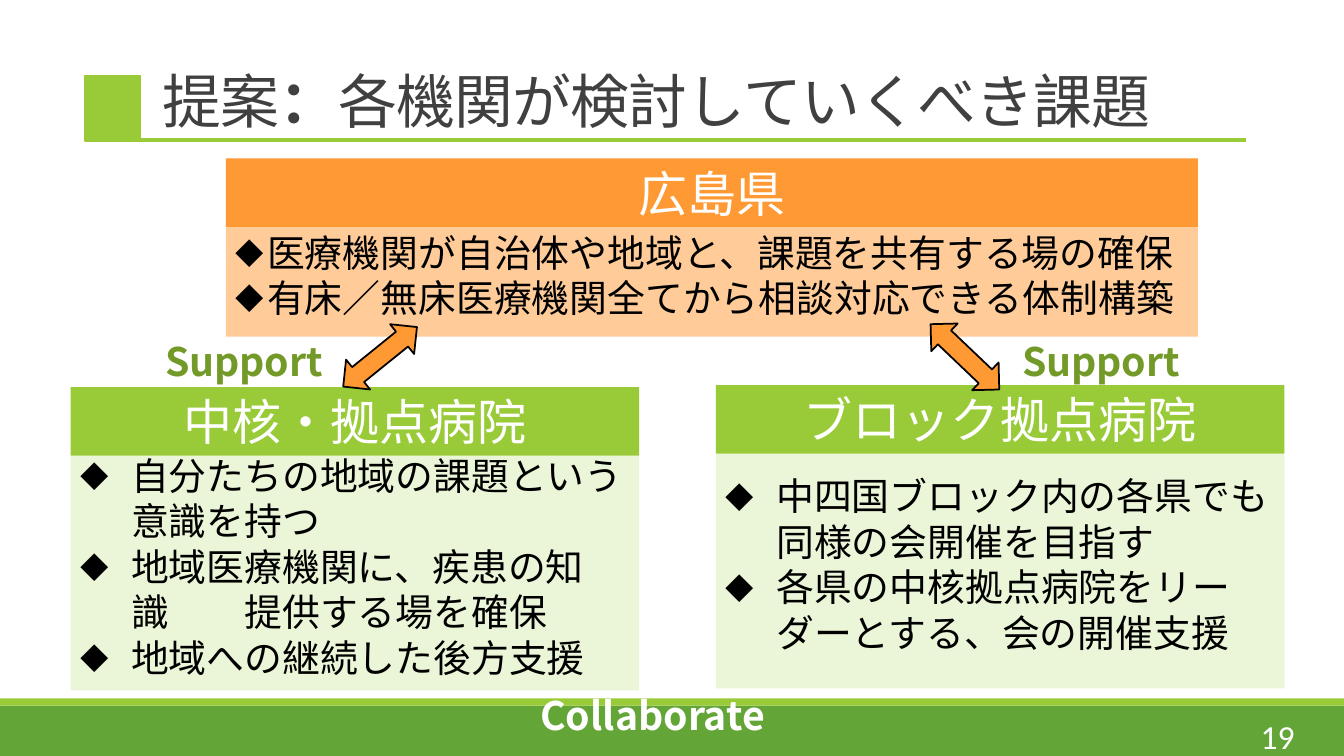
from dataclasses import dataclass

import pptx
import pptx.dml.color
import pptx.enum.shapes
import pptx.enum.text
import pptx.oxml.ns
import pptx.util
from lxml import etree
from pptx.util import Inches


@dataclass(frozen=True)
class Theme:
    latin: str = "Calibri"
    japanese: str = "Noto Sans CJK JP"
    green: str = "99CB38"
    dark_green: str = "63A537"
    pale_green: str = "EBF5D7"
    label_green: str = "739A28"
    orange: str = "FF9933"
    pale_orange: str = "FFCC99"
    title_gray: str = "404040"
    black: str = "000000"
    white: str = "FFFFFF"
    title_size: int = 42
    heading_size: int = 35
    label_size: int = 28
    list_size: int = 27
    number_size: int = 24


theme = Theme()
qn = pptx.oxml.ns.qn
rgb = pptx.dml.color.RGBColor.from_string
ALIGN = pptx.enum.text.PP_ALIGN
ANCHOR = pptx.enum.text.MSO_ANCHOR
SHAPE = pptx.enum.shapes.MSO_SHAPE


def style_paragraph(paragraph, size, color, name, align=ALIGN.LEFT, bold=False):
    paragraph.alignment = align
    font = paragraph.font
    font.size, font.bold, font.name = pptx.util.Pt(size), bold, name
    font.color.rgb = rgb(color)
    etree.SubElement(font._rPr, qn("a:ea"), typeface=name)


def add_filled_shape(kind, box, fill, line=None):
    shape = slide.shapes.add_shape(kind, *map(Inches, box))
    shape.shadow.inherit = False
    shape.fill.solid()
    shape.fill.fore_color.rgb = rgb(fill)
    if line:
        shape.line.color.rgb = rgb(line)
        shape.line.width = pptx.util.Pt(1.25)
    else:
        shape.line.fill.background()
    return shape


presentation = pptx.Presentation()
presentation.slide_width, presentation.slide_height = Inches(13.33), Inches(7.5)
slide = presentation.slides.add_slide(presentation.slide_layouts[4])

# Footer bands
add_filled_shape(SHAPE.RECTANGLE, (0, 7, 13.33, 0.5), theme.dark_green)
add_filled_shape(SHAPE.RECTANGLE, (0, 6.93, 13.33, 0.07), theme.green)

# Title with its marker and underline
title = slide.shapes.title
title.left, title.top, title.width, title.height = map(Inches, (1.51, 0.7, 11.12, 0.54))
title.text_frame.auto_size = pptx.enum.text.MSO_AUTO_SIZE.NONE
title.text_frame.vertical_anchor = ANCHOR.TOP
paragraph = title.text_frame.paragraphs[0]
for text in ("提案", "：", "各機関が検討していくべき課題"):
    run = paragraph.add_run()
    run.text = text
    if text == "：":
        run.font.bold = True
paragraph.line_spacing = 0.85
style_paragraph(paragraph, theme.title_size, theme.title_gray, theme.japanese)
paragraph.font._rPr.set("spc", "-50")

add_filled_shape(SHAPE.RECTANGLE, (0.84, 0.75, 0.55, 0.65), theme.green, theme.green)
underline = slide.shapes.add_connector(
    pptx.enum.shapes.MSO_CONNECTOR.STRAIGHT,
    Inches(1.39), Inches(1.39), Inches(12.36), Inches(1.39))
underline.line.color.rgb = rgb(theme.green)
underline.line.width = pptx.util.Pt(3)
etree.SubElement(underline._element.spPr, qn("a:effectLst"))

# Panels: placeholder, heading, left, top, width, list height, indent, colours, items
HEADING_HEIGHT = 0.68
panels = [
    (1, "広島県", 2.24, 1.57, 9.64, 1.09, 0.31, theme.orange, theme.pale_orange,
     ["医療機関が自治体や地域と、課題を共有する場の確保",
      "有床／無床医療機関全てから相談対応できる体制構築"]),
    (2, "中核・拠点病院", 0.7, 3.84, 5.64, 2.33, 0.5, theme.green, theme.pale_green,
     ["自分たちの地域の課題という意識を持つ",
      "地域医療機関に、疾患の知識　　提供する場を確保",
      "地域への継続した後方支援"]),
    (4, "ブロック拠点病院", 7.1, 3.82, 5.64, 2.33, 0.5, theme.green, theme.pale_green,
     ["中四国ブロック内の各県でも同様の会開催を目指す",
      "各県の中核拠点病院をリーダーとする、会の開催支援"]),
]
for index, name, left, top, width, height, indent, strong, pale, items in panels:
    heading = add_filled_shape(
        SHAPE.RECTANGLE, (left, top, width, HEADING_HEIGHT), strong)
    heading.text_frame.text = name
    heading.text_frame.vertical_anchor = ANCHOR.MIDDLE
    style_paragraph(heading.text_frame.paragraphs[0], theme.heading_size,
                    theme.white, theme.latin, ALIGN.CENTER)

    body = slide.placeholders[index]
    body.left, body.top = Inches(left), Inches(top + HEADING_HEIGHT)
    body.width, body.height = Inches(width), Inches(height)
    body.fill.solid()
    body.fill.fore_color.rgb = rgb(pale)
    frame = body.text_frame
    frame.auto_size = pptx.enum.text.MSO_AUTO_SIZE.NONE
    frame.vertical_anchor = ANCHOR.MIDDLE
    frame.margin_top, frame.margin_bottom = Inches(0.16), Inches(0.3)
    frame.text = "\n".join(items)
    for paragraph in frame.paragraphs:
        paragraph.line_spacing = pptx.util.Pt(32.5)
        paragraph.space_before = pptx.util.Pt(0)
        properties = paragraph._p.get_or_add_pPr()
        properties.set("marL", str(Inches(indent)))
        properties.set("indent", str(-Inches(indent)))
        etree.SubElement(properties, qn("a:buSzPct"), val="75000")
        etree.SubElement(properties, qn("a:buFont"), typeface=theme.japanese)
        etree.SubElement(properties, qn("a:buChar"), char="◆")
        style_paragraph(paragraph, theme.list_size, theme.black, theme.japanese)

unused = slide.placeholders[3]._element
unused.getparent().remove(unused)

# Labels and slide number
labels = [
    ("Support", (1.36, 3.25, 2.12, 0.65), theme.label_size, theme.label_green,
     theme.japanese, ALIGN.CENTER, True),
    ("Support", (9.86, 3.25, 2.12, 0.65), theme.label_size, theme.label_green,
     theme.japanese, ALIGN.CENTER, True),
    ("Collaborate", (5.26, 6.81, 2.82, 0.57), theme.label_size, theme.white,
     theme.japanese, ALIGN.LEFT, True),
    ("19", (11.51, 7.1, 1.43, 0.4), theme.number_size, theme.white,
     theme.latin, ALIGN.RIGHT, False),
]
for text, box, size, color, name, align, bold in labels:
    label = slide.shapes.add_textbox(*map(Inches, box))
    label.text_frame.word_wrap = True
    label.text_frame.vertical_anchor = ANCHOR.MIDDLE
    label.text_frame.text = text
    style_paragraph(label.text_frame.paragraphs[0], size, color, name, align, bold)

# Two-way arrows between the prefecture and the hospitals
for left, rotation in ((3.3, 321.1), (9.1, 223.6)):
    arrow = add_filled_shape(
        SHAPE.LEFT_RIGHT_ARROW, (left, 3.35, 0.94, 0.38), theme.orange, theme.black)
    arrow.rotation = rotation

presentation.save("out.pptx")
